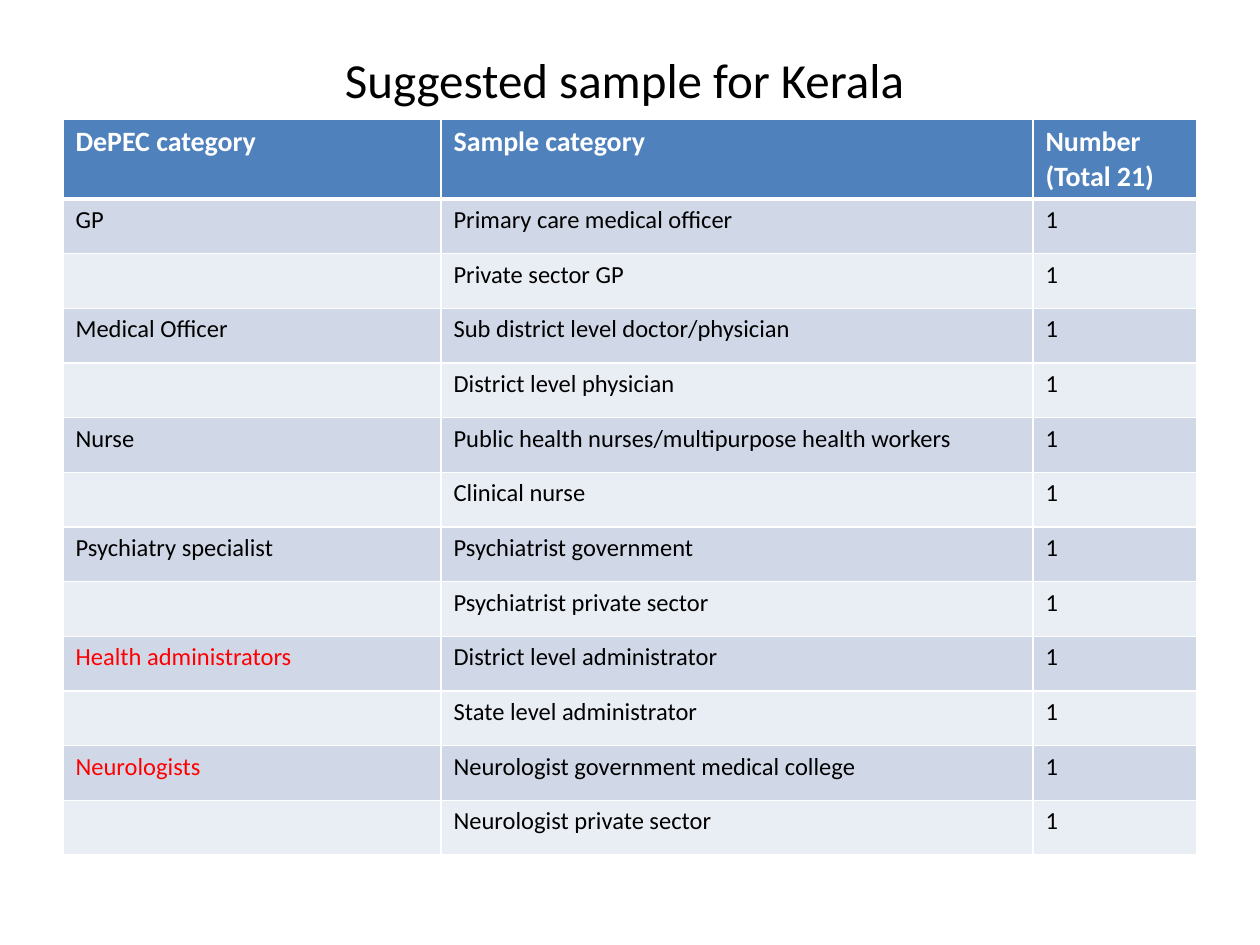
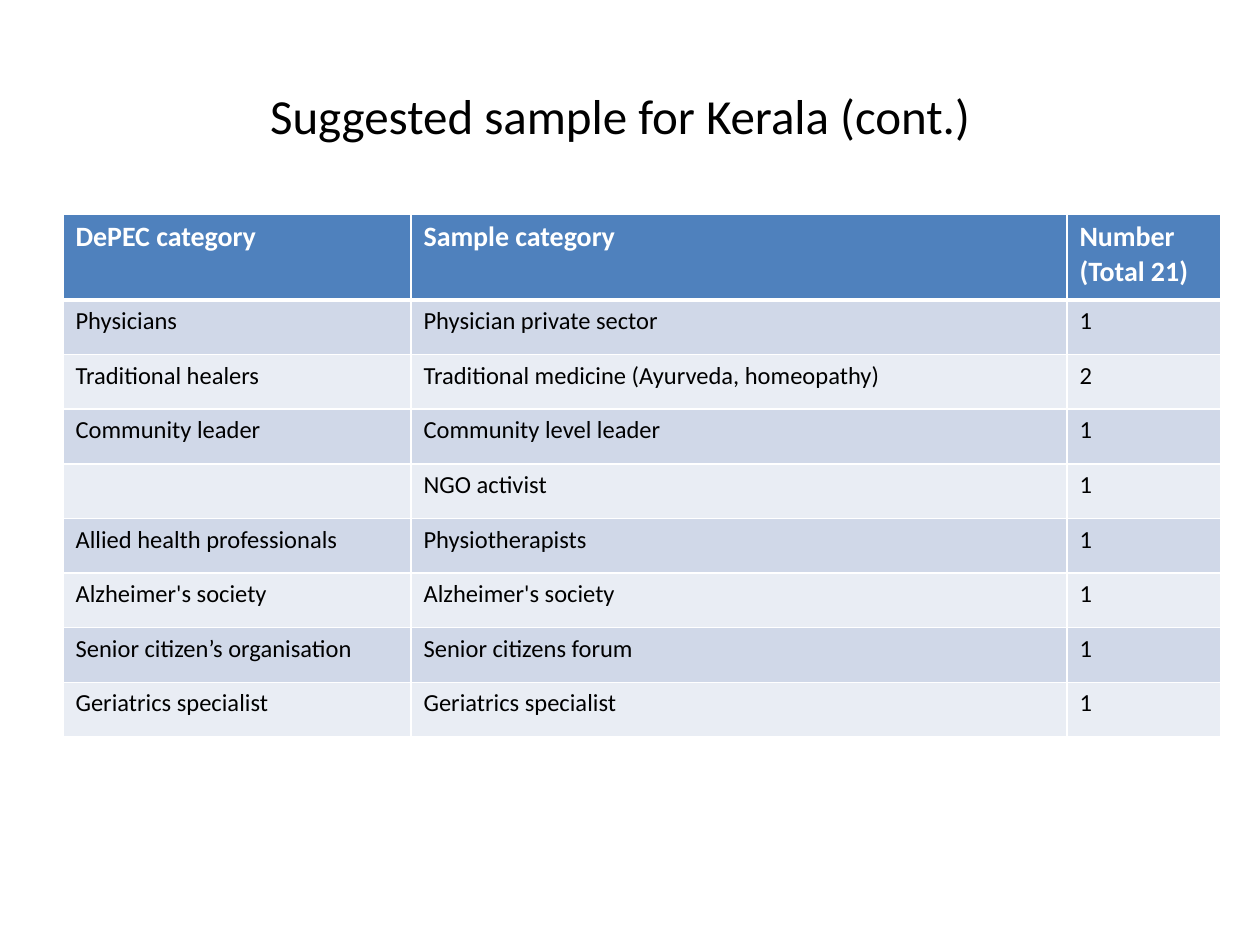
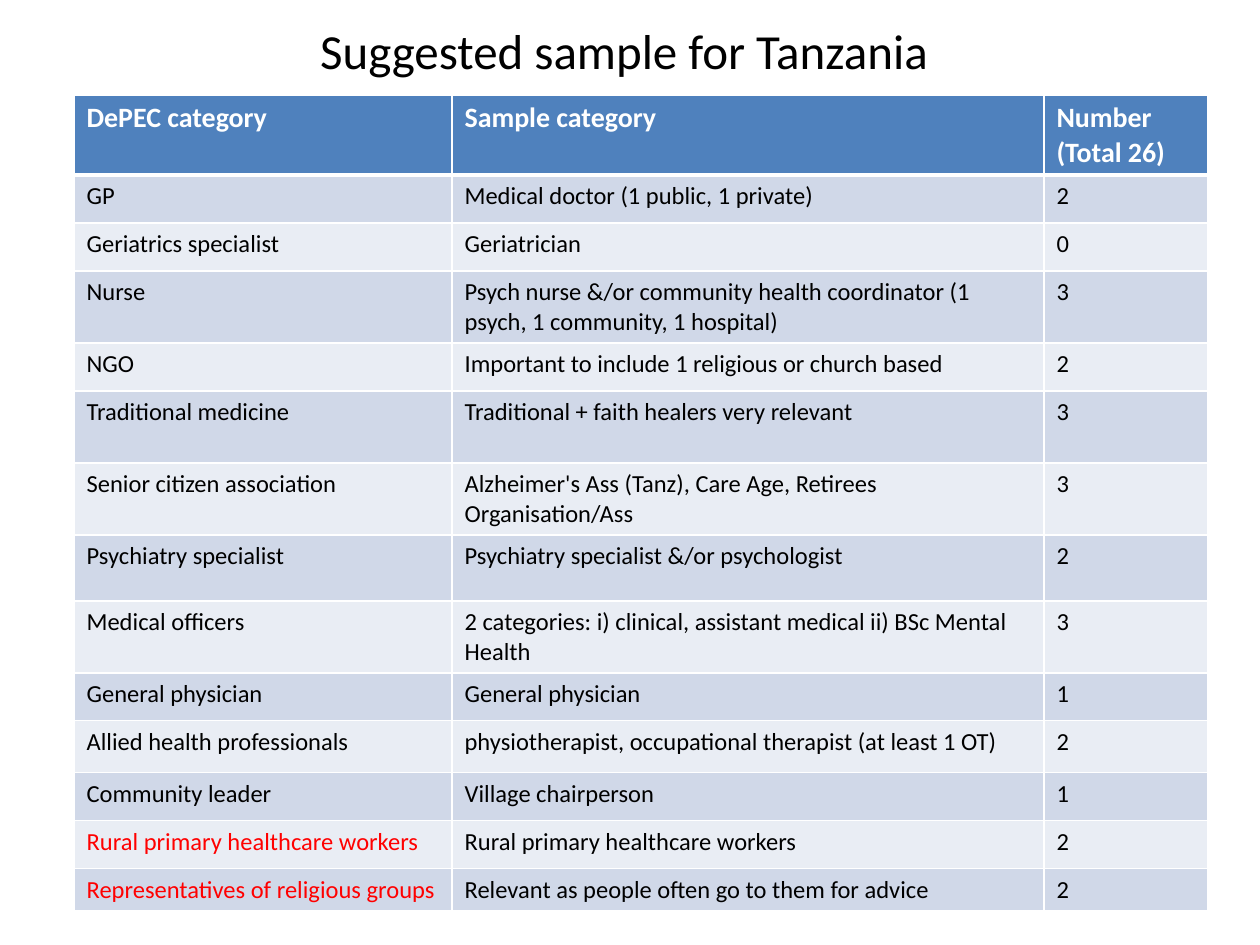
from lxml.etree import SubElement
from pptx import Presentation
from pptx.dml.color import RGBColor
from pptx.enum.text import MSO_ANCHOR, PP_ALIGN
from pptx.oxml.ns import qn
from pptx.util import Pt

PX = 914400 / 126
FONT = "Calibri"
BLACK, WHITE, RED = "000000", "FFFFFF", "FF0000"
HEADER_FILL = "4F81BD"
BAND_FILLS = ("D0D8E8", "E9EDF4")
THIN, THICK = 1, 3
NEW_CATEGORIES = {
    "Health administrators",
    "Neurologists",
    "Rural primary healthcare workers",
    "Representatives of religious groups",
}

SAMPLES = [
    {
        "title": "Suggested sample for Kerala ",
        "title_box": (63, 0, 1134, 158),
        "total": 21,
        "table_at": (63, 119),
        "columns": (378, 592, 164),
        "header_height": 80,
        "body_height": 656,
        "rows": [
            ("GP", "Primary care medical officer", 1),
            ("", "Private sector GP", 1),
            ("Medical Officer", "Sub district level doctor/physician", 1),
            ("", "District level physician", 1),
            ("Nurse", "Public health nurses/multipurpose health workers", 1),
            ("", "Clinical nurse", 1),
            ("Psychiatry specialist", "Psychiatrist government", 1),
            ("", "Psychiatrist private sector", 1),
            ("Health administrators", "District level administrator", 1),
            ("", "State level administrator", 1),
            ("Neurologists", "Neurologist government medical college", 1),
            ("", "Neurologist private sector", 1),
        ],
    },
    {
        "title": "Suggested sample for Kerala (cont.) ",
        "title_box": (74, 76, 1103, 77),
        "total": 21,
        "table_at": (63, 214),
        "columns": (348, 656, 154),
        "header_height": 86,
        "body_height": 437,
        "rows": [
            ("Physicians", "Physician private sector", 1),
            ("Traditional healers", "Traditional medicine (Ayurveda, homeopathy)", 2),
            ("Community leader", "Community level leader", 1),
            ("", "NGO activist", 1),
            ("Allied health professionals", "Physiotherapists", 1),
            ("Alzheimer's society", "Alzheimer's society", 1),
            ("Senior citizen’s organisation", "Senior citizens forum", 1),
            ("Geriatrics specialist", "Geriatrics specialist", 1),
        ],
    },
    {
        "title": "Suggested sample for Tanzania ",
        "title_box": (118, 4, 1023, 92),
        "total": 26,
        "table_at": (74, 95),
        "columns": (378, 592, 164),
        "header_height": 80,
        "body_heights": (48, 48, 72, 48, 72, 72, 66, 72, 48, 52, 48, 48, 42),
        "rows": [
            ("GP", "Medical doctor (1 public, 1 private)", 2),
            ("Geriatrics specialist", "Geriatrician", 0),
            ("Nurse", "Psych nurse &/or community health coordinator "
             "(1 psych, 1 community, 1 hospital)", 3),
            ("NGO", "Important to include 1 religious or church based", 2),
            ("Traditional medicine", "Traditional + faith healers very relevant", 3),
            ("Senior citizen association",
             "Alzheimer's Ass (Tanz), Care Age, Retirees Organisation/Ass", 3),
            ("Psychiatry specialist", "Psychiatry specialist &/or psychologist", 2),
            ("Medical officers",
             "2 categories: i) clinical, assistant medical ii) BSc Mental Health", 3),
            ("General physician", "General physician", 1),
            ("Allied health professionals",
             "physiotherapist, occupational therapist (at least 1 OT)", 2),
            ("Community leader", "Village chairperson", 1),
            ("Rural primary healthcare workers", "Rural primary healthcare workers", 2),
            ("Representatives of religious groups",
             "Relevant as people often go to them for advice", 2),
        ],
    },
]


def px(length):
    return round(length * PX)


def color(value):
    return RGBColor.from_string(value)


def write(frame, text, size, ink, bold=False):
    frame.text = text
    for span in frame.paragraphs[0].runs:
        span.font.name = FONT
        span.font.size = Pt(size)
        span.font.bold = bold
        span.font.color.rgb = color(ink)


def add_title(page, text, place):
    box = page.shapes.add_textbox(*map(px, place))
    frame = box.text_frame
    frame.word_wrap = True
    frame.vertical_anchor = MSO_ANCHOR.MIDDLE
    write(frame, text, 28, BLACK)
    frame.paragraphs[0].alignment = PP_ALIGN.CENTER


def set_borders(cell, top, bottom):
    properties = cell._tc.get_or_add_tcPr()
    widths = {"a:lnL": THIN, "a:lnR": THIN, "a:lnT": top, "a:lnB": bottom}
    for tag, width in widths.items():
        line = SubElement(properties, qn(tag), w=str(Pt(width)))
        fill = SubElement(line, qn("a:solidFill"))
        SubElement(fill, qn("a:srgbClr"), val=WHITE)


def fill_cell(cell, row_number, text):
    is_header = row_number == 0
    set_borders(cell, THICK if row_number == 1 else THIN, THICK if is_header else THIN)
    cell.fill.solid()
    if is_header:
        cell.fill.fore_color.rgb = color(HEADER_FILL)
        write(cell.text_frame, text, 16, WHITE, bold=True)
    else:
        cell.fill.fore_color.rgb = color(BAND_FILLS[(row_number - 1) % 2])
        write(cell.text_frame, text, 14, BLACK)


def add_sample_table(page, sample):
    header = ("DePEC category", "Sample category", f"Number (Total {sample['total']})")
    rows = [header, *sample["rows"]]
    count = len(sample["rows"])
    body = sample.get("body_heights") or [sample["body_height"] / count] * count
    heights = [sample["header_height"], *body]
    widths = sample["columns"]
    left, top = sample["table_at"]
    table = page.shapes.add_table(
        len(rows), len(widths), px(left), px(top), px(sum(widths)), px(sum(heights))
    ).table
    for column, width in zip(table.columns, widths):
        column.width = px(width)
    for row_number, (values, height) in enumerate(zip(rows, heights)):
        table.rows[row_number].height = px(height)
        for column_number, value in enumerate(values):
            fill_cell(table.cell(row_number, column_number), row_number, str(value))
        if values[0] in NEW_CATEGORIES:
            write(table.cell(row_number, 0).text_frame, values[0], 14, RED)


def main():
    deck = Presentation()
    deck.slide_width, deck.slide_height = px(1260), px(945)
    for sample in SAMPLES:
        page = deck.slides.add_slide(deck.slide_layouts[6])
        add_title(page, sample["title"], sample["title_box"])
        add_sample_table(page, sample)
    deck.save("out.pptx")


if __name__ == "__main__":
    main()
